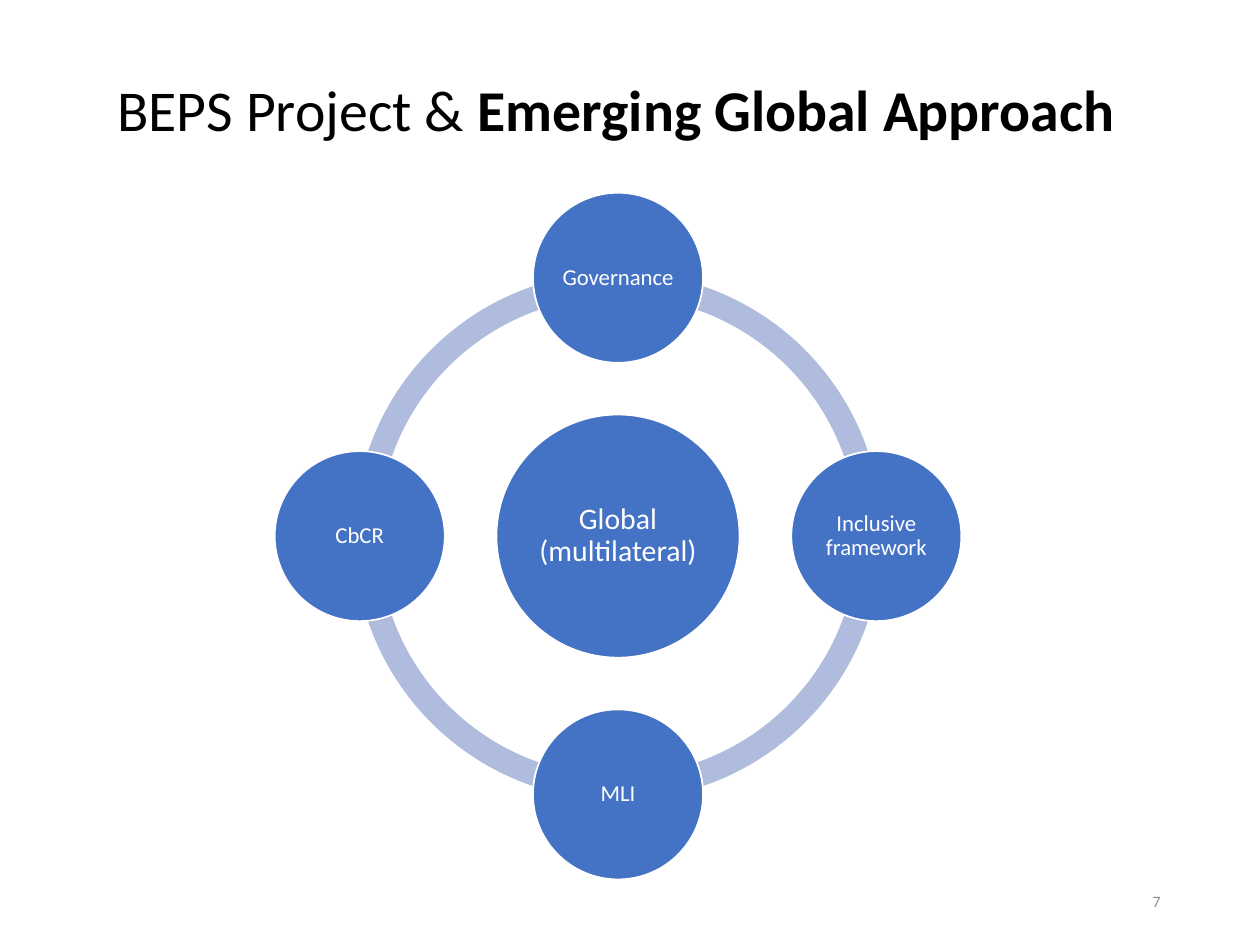
"""Build the slide on the BEPS project and the emerging global approach."""
from math import cos, radians, sin

from pptx import Presentation
from pptx.dml.color import RGBColor
from pptx.enum.shapes import MSO_SHAPE as Shape
from pptx.enum.text import MSO_ANCHOR as Anchor, PP_ALIGN as Align
from pptx.util import Inches, Pt

TITLE = [("BEPS Project & ", False), ("Emerging Global Approach", True)]
HUB = "Global (multilateral)"
SATELLITES = ["Governance", "Inclusive framework", "MLI", "CbCR"]
PAGE_NUMBER = "7"

COLORS = {"circle": "4472C4", "ring": "B0BCDE", "white": "FFFFFF",
          "title": "000000", "number": "8C8C8C"}
FONT = "Calibri"
WIDTH, HEIGHT = 10, 7.5
MARGIN, CONTENT_WIDTH = 0.69, 8.62
CENTER_X, CENTER_Y = 4.905, 4.255
HUB_SIZE, SATELLITE_SIZE, RING_SIZE = 1.93, 1.35, 4.19
ORBIT, RING_THICKNESS = 2.05, 0.046
ARC_UNITS_PER_DEGREE = 0.6


def color(name):
    return RGBColor.from_string(COLORS[name])


def write(shape, spans, size, ink, align=Align.CENTER, spacing=0.9, inset=None):
    """Fill a shape with one paragraph of (text, bold) spans."""
    frame = shape.text_frame
    frame.word_wrap = True
    frame.vertical_anchor = Anchor.MIDDLE
    if inset is not None:
        frame.margin_left = frame.margin_right = Inches(inset)
        frame.margin_top = frame.margin_bottom = Inches(inset)
    para = frame.paragraphs[0]
    para.alignment = align
    para.line_spacing = spacing
    for text, bold in spans:
        span = para.add_run()
        span.text = text
        span.font.name = FONT
        span.font.size = Pt(size)
        span.font.bold = bold
        span.font.color.rgb = color(ink)


def add_round(page, kind, x, y, size, fill):
    """Add a square-framed shape centred on a point."""
    shape = page.shapes.add_shape(kind, Inches(x - size / 2), Inches(y - size / 2),
                                  Inches(size), Inches(size))
    shape.shadow.inherit = False
    shape.fill.solid()
    shape.fill.fore_color.rgb = color(fill)
    shape.line.fill.background()
    return shape


def add_circle(page, text, x, y, size, text_size):
    """Add a white-edged circle with its label."""
    circle = add_round(page, Shape.OVAL, x, y, size, "circle")
    circle.line.color.rgb = color("white")
    circle.line.width = Pt(1)
    write(circle, [(text, False)], text_size, "white", inset=0.02)


def add_title(page):
    """Place and format the title."""
    title = page.shapes.title
    title.left, title.top = Inches(MARGIN), Inches(0.4)
    title.width, title.height = Inches(CONTENT_WIDTH), Inches(0.99)
    write(title, TITLE, 33, "title")
    title.text_frame.margin_right = Inches(0.32)


def add_cycle(page):
    """Draw the ring, the hub and the satellites around it."""
    step = 360 / len(SATELLITES)
    for index in range(len(SATELLITES)):
        arc = add_round(page, Shape.BLOCK_ARC, CENTER_X, CENTER_Y, RING_SIZE, "ring")
        start = index * step
        arc.adjustments[0] = start * ARC_UNITS_PER_DEGREE
        arc.adjustments[1] = (start + step) % 360 * ARC_UNITS_PER_DEGREE
        arc.adjustments[2] = RING_THICKNESS
    add_circle(page, HUB, CENTER_X, CENTER_Y, HUB_SIZE, 17)
    for index, text in enumerate(SATELLITES):
        angle = radians(index * step - 90)
        add_circle(page, text, CENTER_X + ORBIT * cos(angle),
                   CENTER_Y + ORBIT * sin(angle), SATELLITE_SIZE, 13)


def add_page_number(page):
    """Put the page number in the lower right corner."""
    width = 2.25
    box = page.shapes.add_textbox(Inches(MARGIN + CONTENT_WIDTH - width), Inches(6.95),
                                  Inches(width), Inches(0.4))
    write(box, [(PAGE_NUMBER, False)], 9, "number", align=Align.RIGHT, spacing=1.0)


def main():
    deck = Presentation()
    deck.slide_width, deck.slide_height = Inches(WIDTH), Inches(HEIGHT)
    page = deck.slides.add_slide(deck.slide_layouts.get_by_name("Title Only"))
    add_title(page)
    add_cycle(page)
    add_page_number(page)
    deck.save("out.pptx")


if __name__ == "__main__":
    main()
